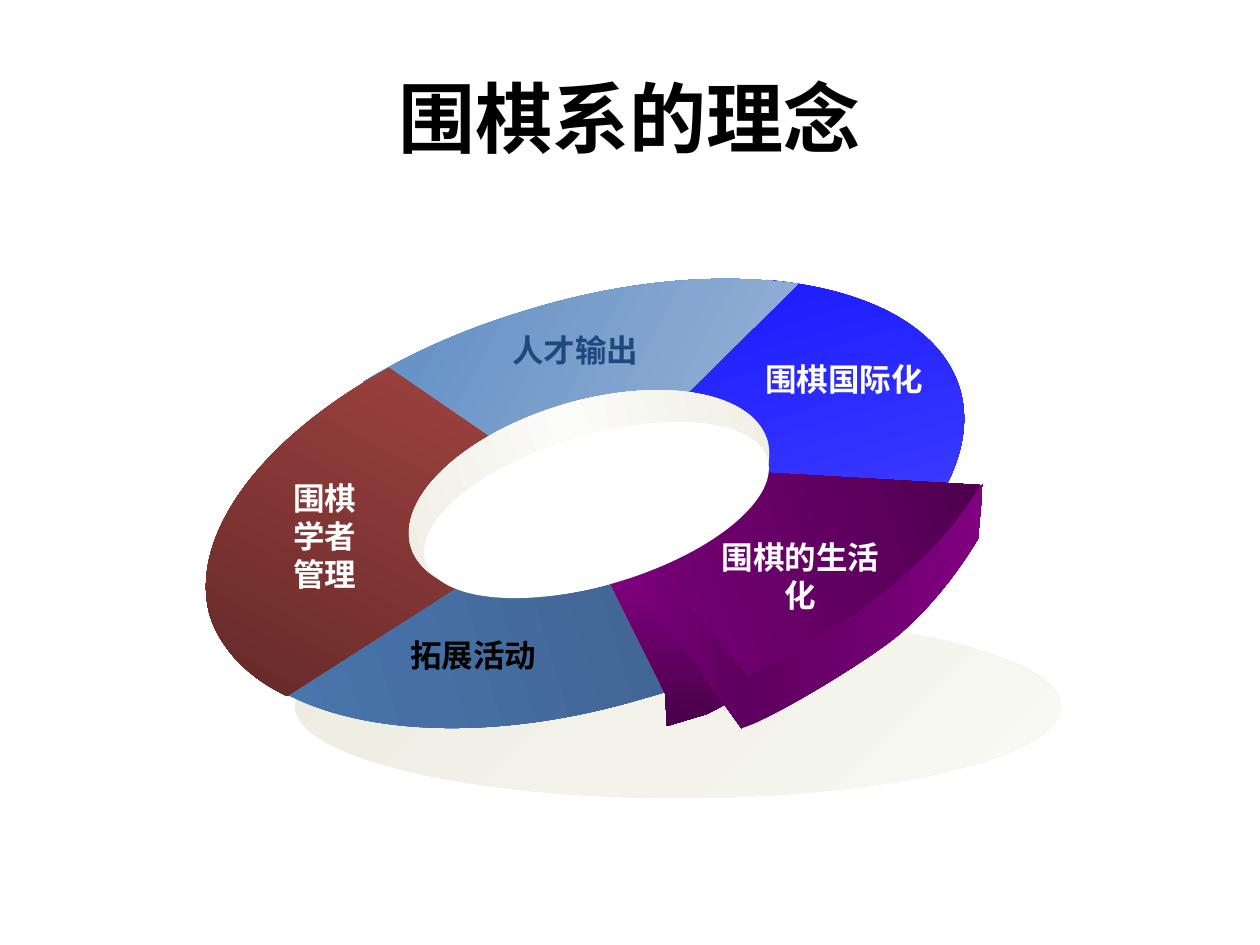
from copy import deepcopy
from math import cos, radians, sin
from pptx import Presentation
from pptx.dml.color import RGBColor as RGB
from pptx.enum.shapes import MSO_SHAPE as Kind
from pptx.enum.text import MSO_ANCHOR as Anchor, MSO_AUTO_SIZE as Fit, PP_ALIGN as Align
from pptx.oxml.ns import qn
from pptx.util import Emu, Pt

UNIT = 914400 / 126
TILT = -16.6
SANS = "DejaVu Sans"
HAN = "Noto Sans CJK KR"

BLACK = RGB(0x00, 0x00, 0x00)
WHITE = RGB(0xFF, 0xFF, 0xFF)
NAVY = RGB(0x1F, 0x49, 0x7D)
SAND = RGB(0xEE, 0xEC, 0xE1)
PALE = RGB(0xF7, 0xF9, 0xF2)
CREAM = RGB(0xFB, 0xFB, 0xF8)
TEAL = RGB(0x27, 0x91, 0xBB)
BLUE = RGB(0x10, 0x10, 0xFF)
SKY = RGB(0x48, 0x48, 0xFF)
STEEL = RGB(0x4A, 0x79, 0xB2)
SLATE = RGB(0x40, 0x62, 0x8F)
AZURE = RGB(0x5A, 0x8A, 0xC2)
MIST = RGB(0xA4, 0xBA, 0xDA)
RED = RGB(0xAC, 0x48, 0x45)
WINE = RGB(0x60, 0x28, 0x27)
PURPLE = RGB(0x80, 0x00, 0x80)
PLUM = RGB(0x5E, 0x00, 0x5E)
DARK = RGB(0x48, 0x00, 0x48)


def px(num):
    return Emu(round(num * UNIT))


def spin(x, y, turn):
    a = radians(turn)
    return x * cos(a) - y * sin(a), x * sin(a) + y * cos(a)


def write(frame, text, size=18, font=SANS, color=BLACK):
    for i, line in enumerate(text.split("\n")):
        para = frame.paragraphs[0] if i == 0 else frame.add_paragraph()
        para.alignment = Align.CENTER
        run = para.add_run()
        run.text = line
        run.font.size = Pt(size)
        run.font.bold = True
        run.font.name = font
        run.font.color.rgb = color
        east = run.font._element.makeelement(qn("a:ea"), {"typeface": font})
        run.font._element.find(qn("a:latin")).addnext(east)


def bend(shape, parts):
    lines = iter(list(shape._element.spPr.iter(qn("a:lnTo"))))
    for part in parts:
        first = next(lines)
        if len(part) == 2:
            continue
        curve = first.makeelement(qn("a:cubicBezTo"), {})
        first.addprevious(curve)
        for line in (first, next(lines), next(lines)):
            curve.append(line[0])
            line.getparent().remove(line)


class Board:
    def __init__(self, slide):
        self.shapes = slide.shapes

    def paint(self, shape, colors, angle):
        shape.shadow.inherit = False
        shape.line.fill.background()
        fill = shape.fill
        if len(colors) == 1:
            fill.solid()
            fill.fore_color.rgb = colors[0]
            return
        fill.gradient()
        fill.gradient_angle = -angle % 360
        if len(colors) == 3:
            first = shape._element.spPr.find(".//" + qn("a:gs"))
            first.addnext(deepcopy(first))
        for i, (stop, color) in enumerate(zip(fill.gradient_stops, colors)):
            stop.color.rgb = color
            stop.position = i / (len(colors) - 1)

    def oval(self, box, *colors, angle=0, turn=0):
        shape = self.shapes.add_shape(Kind.OVAL, *map(px, box))
        shape.rotation = turn
        self.paint(shape, colors, angle)

    def piece(self, start, parts, *colors, angle=0, turn=0):
        flat = [*start, *(n for part in parts for n in part)]
        spots = [tuple(map(px, spin(x, y, -turn))) for x, y in zip(flat[::2], flat[1::2])]
        form = self.shapes.build_freeform(*spots[0], scale=1.0)
        form.add_line_segments(spots[1:], close=True)
        shape = form.convert_to_shape()
        bend(shape, parts)
        wide, high = shape.width / 2, shape.height / 2
        x, y = spin(shape.left + wide, shape.top + high, turn)
        shape.left, shape.top = Emu(round(x - wide)), Emu(round(y - high))
        shape.rotation = turn
        self.paint(shape, colors, angle)

    def label(self, box, text, wrap=False, anchor=Anchor.TOP, fit=Fit.SHAPE_TO_FIT_TEXT, **style):
        frame = self.shapes.add_textbox(*map(px, box)).text_frame
        frame.word_wrap = wrap
        frame.auto_size = fit
        frame.vertical_anchor = anchor
        write(frame, text, **style)


def main():
    deck = Presentation()
    deck.slide_width, deck.slide_height = px(1260), px(945)
    board = Board(deck.slides.add_slide(deck.slide_layouts[6]))

    board.label((63, 38, 1134, 158), "围棋系的理念", wrap=True,
                anchor=Anchor.MIDDLE, fit=Fit.NONE, size=44, font=HAN)

    board.oval((295, 615, 766, 183), SAND, PALE, angle=45)
    board.oval((203, 302, 766, 403), TEAL, BLACK, angle=45, turn=TILT)
    board.piece((767, 280), [(871, 289, 942, 329, 960, 389),
                             (971, 427, 960, 470, 929, 514), (583, 501)],
                BLUE, SKY, angle=90, turn=TILT)
    board.piece((223, 636), [(275, 729, 456, 755, 645, 698),
                             (667, 692, 687, 685, 707, 677), (587, 503)],
                STEEL, SLATE, turn=TILT)
    board.piece((363, 382), [(412, 352, 467, 328, 528, 310),
                             (622, 281, 718, 272, 798, 284), (583, 496)],
                AZURE, MIST, angle=45, turn=TILT)
    board.piece((389, 368), [(258, 440, 188, 538, 210, 616),
                             (221, 649, 247, 677, 287, 696), (587, 504)],
                RED, WINE, angle=135, turn=TILT)
    board.oval((403, 401, 372, 185), SAND, CREAM, SAND, turn=TILT)

    board.label((281, 473, 88, 127), "围棋\n学者\n管理", color=WHITE)
    board.label((443, 325, 265, 50), "人才输出", wrap=True, color=NAVY)
    board.label((752, 354, 184, 50), "围棋国际化", color=WHITE)
    board.label((398, 630, 151, 50), "拓展活动")

    board.piece((609, 581), [(665, 693), (667, 726), (707, 714), (728, 703), (634, 577)],
                PURPLE, DARK, angle=90)
    board.piece((742, 678), [(983, 484), (978, 539), (963, 564, 934, 606, 895, 638),
                             (855, 669, 767, 721, 742, 728),
                             (738, 711, 742, 678, 742, 678)],
                PLUM, PURPLE)
    board.piece((980, 485), [(934, 562, 843, 634, 731, 683), (580, 462)],
                PURPLE, DARK, turn=-17.7)
    board.piece((746, 674), [(742, 729), (619, 558), (639, 549)], PURPLE, PLUM)
    board.oval((418, 435, 357, 150), WHITE, turn=TILT)
    board.label((694, 532, 213, 50), "围棋的生活化", wrap=True, color=WHITE)

    deck.save("out.pptx")


if __name__ == "__main__":
    main()
